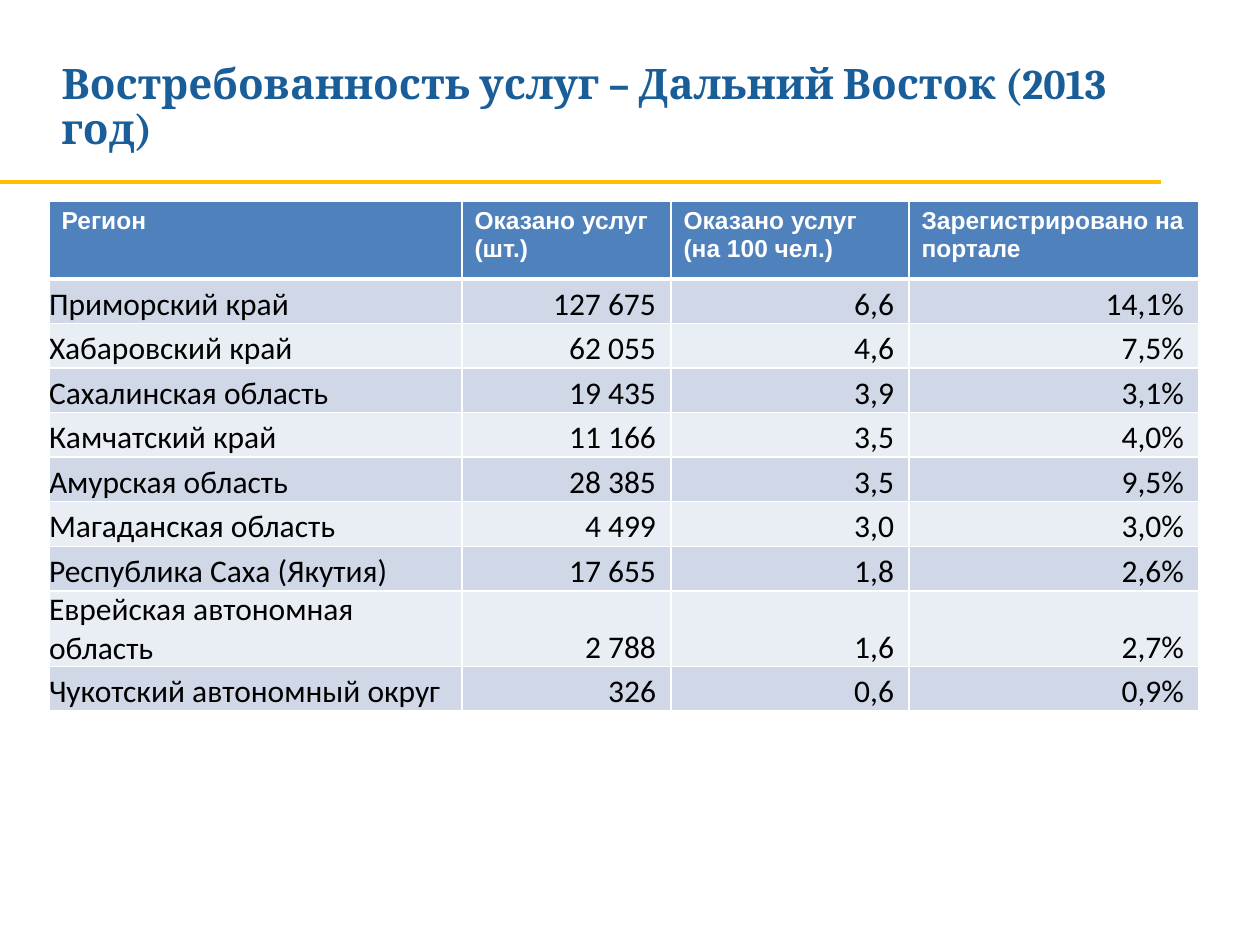
from lxml.etree import SubElement
from pptx import Presentation
from pptx.dml.color import RGBColor
from pptx.enum.shapes import MSO_CONNECTOR
from pptx.enum.text import MSO_ANCHOR, MSO_AUTO_SIZE, PP_ALIGN
from pptx.oxml.ns import qn
from pptx.util import Pt

EMU_PER_PX = 914400 / 126
COLORS = {
    "title": "1A5E99",
    "rule": "FFC000",
    "header": "4F81BD",
    "odd": "D0D8E8",
    "even": "E9EDF4",
    "white": "FFFFFF",
    "black": "000000",
}
HEADINGS = ["Регион", "Оказано услуг (шт.)", "Оказано услуг (на 100 чел.)", "Зарегистрировано на портале"]
REGIONS = [
    ("Приморский край", "127 675", "6,6", "14,1%"),
    ("Хабаровский край", "62 055", "4,6", "7,5%"),
    ("Сахалинская область", "19 435", "3,9", "3,1%"),
    ("Камчатский край", "11 166", "3,5", "4,0%"),
    ("Амурская область", "28 385", "3,5", "9,5%"),
    ("Магаданская область", "4 499", "3,0", "3,0%"),
    ("Республика Саха (Якутия)", "17 655", "1,8", "2,6%"),
    ("Еврейская автономная область", "2 788", "1,6", "2,7%"),
    ("Чукотский автономный округ", "326", "0,6", "0,9%"),
]


def px(length):
    return round(length * EMU_PER_PX)


def color(name):
    return RGBColor.from_string(COLORS[name])


def write(frame, text, font, size, ink, bold=False, align=PP_ALIGN.LEFT, spacing=1.0):
    paragraph = frame.paragraphs[0]
    paragraph.alignment = align
    paragraph.line_spacing = spacing
    run = paragraph.add_run()
    run.text = text
    run.font.name = font
    run.font.size = Pt(size)
    run.font.bold = bold
    run.font.color.rgb = color(ink)


class SlideBuilder:
    title_font = "Cambria"
    heading_font = "Arial"
    body_font = "Calibri"

    def __init__(self, slide):
        self.slide = slide

    def title(self, text, left, top, width, height):
        heading = self.slide.shapes.title
        heading.left, heading.top = px(left), px(top)
        heading.width, heading.height = px(width), px(height)
        frame = heading.text_frame
        frame.word_wrap = True
        frame.auto_size = MSO_AUTO_SIZE.SHAPE_TO_FIT_TEXT
        frame.vertical_anchor = MSO_ANCHOR.TOP
        write(frame, text, self.title_font, 24, "title", bold=True, spacing=0.9)

    def rule(self, left, right, top):
        divider = self.slide.shapes.add_connector(
            MSO_CONNECTOR.STRAIGHT, px(left), px(top), px(right), px(top)
        )
        divider.line.color.rgb = color("rule")
        divider.line.width = Pt(2.5)
        SubElement(divider._element.spPr, qn("a:effectLst"))

    def borders(self, cell, **widths):
        properties = cell._tc.get_or_add_tcPr()
        for side in "LRTB":
            line = SubElement(properties, qn(f"a:ln{side}"), w=str(Pt(widths.get(side, 1))))
            fill = SubElement(line, qn("a:solidFill"))
            SubElement(fill, qn("a:srgbClr"), val=COLORS["white"])

    def fill(self, cell, name):
        cell.fill.solid()
        cell.fill.fore_color.rgb = color(name)

    def header_cell(self, cell, text):
        self.borders(cell, B=3)
        self.fill(cell, "header")
        write(cell.text_frame, text, self.heading_font, 14, "white", bold=True)

    def body_cell(self, cell, text, row, column):
        self.borders(cell, T=3 if row == 1 else 1)
        self.fill(cell, "odd" if row % 2 else "even")
        cell.vertical_anchor = MSO_ANCHOR.BOTTOM
        cell.margin_left = cell.margin_top = cell.margin_bottom = 0
        cell.margin_right = px(15) if column else 0
        align = PP_ALIGN.RIGHT if column else PP_ALIGN.LEFT
        write(cell.text_frame, text, self.body_font, 18, "black", align=align)

    def table(self, headings, records, left, top, widths, header_height, body_height):
        table = self.slide.shapes.add_table(
            len(records) + 1, len(headings), px(left), px(top),
            px(sum(widths)), px(header_height + body_height),
        ).table
        table.horz_banding = False
        for column, width in zip(table.columns, widths):
            column.width = px(width)
        for row in table.rows:
            row.height = px(body_height / len(records))
        table.rows[0].height = px(header_height)
        for column, text in enumerate(headings):
            self.header_cell(table.cell(0, column), text)
        for row, record in enumerate(records, 1):
            for column, text in enumerate(record):
                self.body_cell(table.cell(row, column), text, row, column)


def main():
    deck = Presentation()
    deck.slide_width, deck.slide_height = px(1260), px(945)
    builder = SlideBuilder(deck.slides.add_slide(deck.slide_layouts[5]))
    builder.title("Востребованность услуг – Дальний Восток (2013 год)", 49, 57, 1111, 115)
    builder.rule(0, 1161, 182)
    builder.table(HEADINGS, REGIONS, 49, 201, [413, 209, 238, 290], 78, 401)
    deck.save("out.pptx")


if __name__ == "__main__":
    main()
